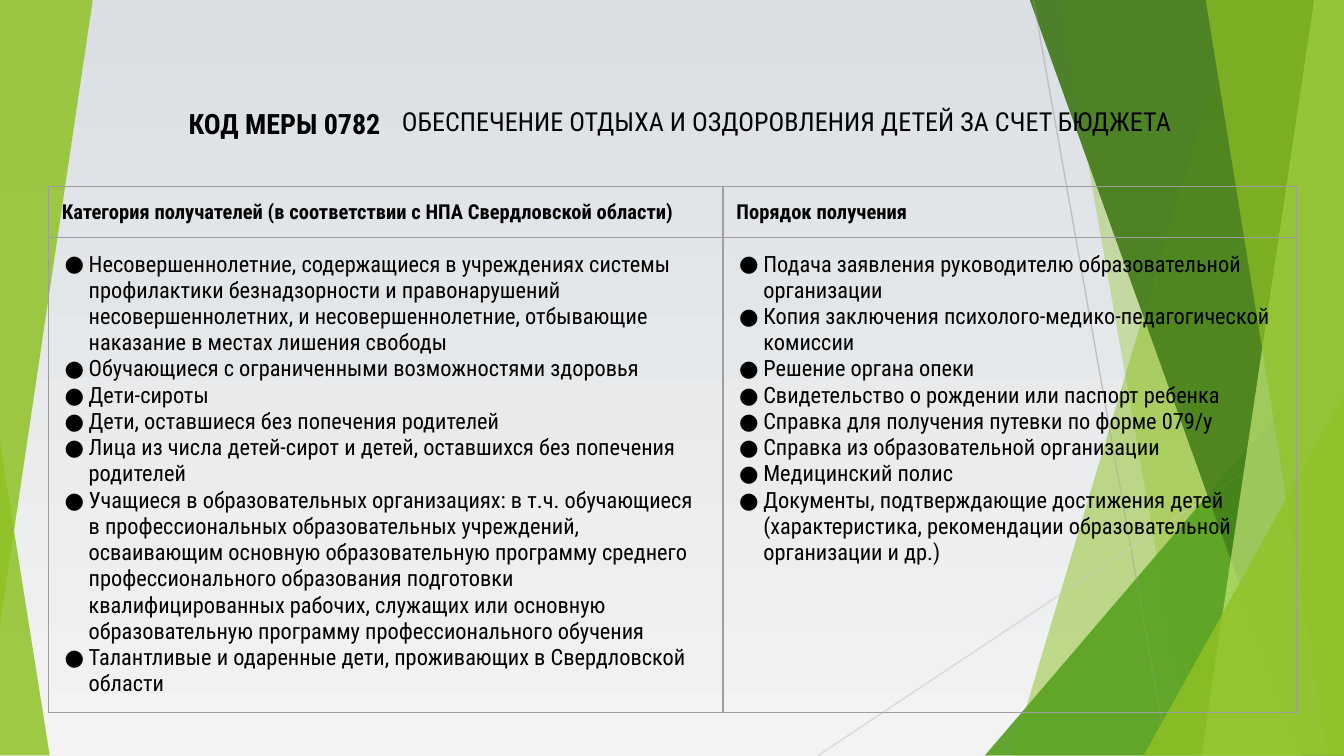
from lxml.etree import SubElement
from pptx import Presentation
from pptx.dml.color import RGBColor
from pptx.enum.shapes import MSO_CONNECTOR, MSO_SHAPE
from pptx.enum.text import MSO_ANCHOR, PP_ALIGN
from pptx.oxml.ns import qn
from pptx.util import Emu, Pt

PX = 9144  # 100 px to the inch
WIDTH, HEIGHT = 1000, 562
FONT = "Roboto Condensed"
BLACK, GREEN, BORDER = "000000", "90C226", "9E9E9E"
BACKGROUND = ["DADFE4", "F3F3F3"]

CODE = "КОД МЕРЫ 0782"
TITLE = "ОБЕСПЕЧЕНИЕ ОТДЫХА И ОЗДОРОВЛЕНИЯ ДЕТЕЙ ЗА СЧЕТ БЮДЖЕТА"
COLUMNS = [
    ("Категория получателей (в соответствии с НПА Свердловской области)", 502, [
        "Несовершеннолетние, содержащиеся в учреждениях системы профилактики безнадзорности "
        "и правонарушений несовершеннолетних, и несовершеннолетние, отбывающие наказание "
        "в местах лишения свободы",
        "Обучающиеся с ограниченными возможностями здоровья",
        "Дети-сироты",
        "Дети, оставшиеся без попечения родителей",
        "Лица из числа детей-сирот и детей, оставшихся без попечения родителей",
        "Учащиеся в образовательных организациях: в т.ч. обучающиеся в профессиональных "
        "образовательных учреждений, осваивающим основную образовательную программу среднего "
        "профессионального образования подготовки квалифицированных рабочих, служащих или "
        "основную образовательную программу профессионального обучения",
        "Талантливые и одаренные дети, проживающих в Свердловской области",
    ]),
    ("Порядок получения", 427, [
        "Подача заявления руководителю образовательной организации",
        "Копия заключения психолого-медико-педагогической комиссии",
        "Решение органа опеки",
        "Свидетельство о рождении или паспорт ребенка",
        "Справка для получения путевки по форме 079/у",
        "Справка из образовательной организации",
        "Медицинский полис",
        "Документы, подтверждающие достижения детей (характеристика, рекомендации "
        "образовательной организации и др.)",
    ]),
]
ROW_HEIGHTS = [37, 353]

# Right-hand facets. Bands: top x, bottom x; triangles: left, top. All reach the right edge.
FACETS = [
    ("band", 921, 753, GREEN, 30),
    ("band", 788, 887, GREEN, 20),
    ("triangle", 733, 250, "54A021", 72),
    ("band", 766, 968, "3F7819", 70),
    ("band", 978, 894, "C0E474", 70),
    ("band", 897, 988, GREEN, 65),
    ("triangle", 851, 294, GREEN, 80),
]
# Left-hand triangles: box, apex position, rotation.
LOWER_LEFT = ((0, 329, 37, 233), 0, 0)
UPPER_LEFT = ((0, 0, 69, 465), 1, 180)
RAYS = [((769, 0), (869, 563), "BFBFBF"), ((1000, 302), (609, 562), "D9D9D9")]


def px(*values):
    return [Emu(value * PX) for value in values]


def color(value):
    return RGBColor.from_string(value)


def set_all(target, **values):
    for name, value in values.items():
        setattr(target, name, value)


def paint(shape, fill, opacity):
    shape.shadow.inherit = False
    shape.line.fill.background()
    shape.fill.solid()
    shape.fill.fore_color.rgb = color(fill)
    tone = shape.fill._xPr.find(qn("a:solidFill"))[0]
    SubElement(tone, qn("a:alpha"), val=str(opacity * 1000))


def add_triangle(slide, box, apex, rotation, fill, opacity):
    shape = slide.shapes.add_shape(MSO_SHAPE.ISOSCELES_TRIANGLE, *px(*box))
    shape.adjustments[0] = apex
    shape.rotation = rotation
    paint(shape, fill, opacity)


def add_facets(slide):
    for kind, first, second, fill, opacity in FACETS:
        if kind == "triangle":
            box = (first, second, WIDTH - first, HEIGHT - second)
            add_triangle(slide, box, 1, 0, fill, opacity)
        else:
            builder = slide.shapes.build_freeform(first, -1, PX)
            builder.add_line_segments([(WIDTH, -1), (WIDTH, HEIGHT), (second, HEIGHT)])
            paint(builder.convert_to_shape(), fill, opacity)


def add_rays(slide):
    for start, end, line in RAYS:
        ray = slide.shapes.add_connector(MSO_CONNECTOR.STRAIGHT, *px(*start, *end))
        ray.line.color.rgb = color(line)
        ray.line.width = Pt(0.75)
        SubElement(ray._element.spPr, qn("a:effectLst"))


def write(paragraph, text, size, bold=False, align=PP_ALIGN.LEFT):
    paragraph.alignment = align
    run = paragraph.add_run()
    run.text = text
    set_all(run.font, name=FONT, size=Pt(size), bold=bold)
    run.font.color.rgb = color(BLACK)


def add_bullet(paragraph):
    properties = paragraph._p.get_or_add_pPr()
    properties.set("marL", str(20 * PX))
    properties.set("indent", str(-18 * PX))
    SubElement(SubElement(properties, qn("a:buClr")), qn("a:srgbClr"), val=BLACK)
    SubElement(properties, qn("a:buFont"), typeface=FONT)
    SubElement(properties, qn("a:buChar"), char="●")


def set_margins(target, side, end):
    side, end = px(side, end)
    set_all(target, margin_left=side, margin_right=side, margin_top=end, margin_bottom=end)


def format_cell(cell):
    set_margins(cell, 10, 10)
    properties = cell._tc.get_or_add_tcPr()
    for side in ("lnL", "lnR", "lnT", "lnB"):
        line = SubElement(properties, qn(f"a:{side}"), w=str(Pt(0.75)))
        SubElement(SubElement(line, qn("a:solidFill")), qn("a:srgbClr"), val=BORDER)
    cell.fill.background()


def add_measure_table(slide):
    widths = [width for _, width, _ in COLUMNS]
    frame = slide.shapes.add_table(len(ROW_HEIGHTS), len(COLUMNS),
                                   *px(36, 139, sum(widths), sum(ROW_HEIGHTS)))
    table = frame.table
    set_all(table, first_row=False, horz_banding=False)
    for row, height in zip(table.rows, px(*ROW_HEIGHTS)):
        row.height = height
    for index, (heading, width, items) in enumerate(COLUMNS):
        table.columns[index].width = Emu(width * PX)
        head, body = table.cell(0, index), table.cell(1, index)
        format_cell(head)
        format_cell(body)
        write(head.text_frame.paragraphs[0], heading, 11, bold=True)
        for number, item in enumerate(items):
            text_frame = body.text_frame
            paragraph = text_frame.add_paragraph() if number else text_frame.paragraphs[0]
            write(paragraph, item, 12)
            add_bullet(paragraph)


def add_heading(slide):
    code = slide.shapes.add_textbox(*px(82, 53, 211, 77))
    set_margins(code.text_frame, 10, 10)
    title = slide.shapes.title
    left, top, width, height = px(292, 53, 630, 77)
    set_all(title, left=left, top=top, width=width, height=height)
    set_margins(title.text_frame, 7, 4)
    for shape in (code, title):
        set_all(shape.text_frame, word_wrap=True, vertical_anchor=MSO_ANCHOR.MIDDLE)
    write(code.text_frame.paragraphs[0], CODE, 15, bold=True, align=PP_ALIGN.RIGHT)
    paragraph = title.text_frame.paragraphs[0]
    write(paragraph, TITLE, 14)
    paragraph.line_spacing = 0.9
    slide.shapes._spTree.append(title._element)  # bring to front


def main():
    presentation = Presentation()
    presentation.slide_width = Emu(WIDTH * PX)
    presentation.slide_height = Emu(WIDTH * PX * 9 // 16)
    slide = presentation.slides.add_slide(presentation.slide_layouts[5])

    background = slide.background.fill
    background.gradient()
    background.gradient_angle = 270
    for stop, value in zip(background.gradient_stops, BACKGROUND):
        stop.color.rgb = color(value)

    add_facets(slide)
    add_triangle(slide, *LOWER_LEFT, GREEN, 85)
    add_rays(slide)
    add_facets(slide)
    add_triangle(slide, *UPPER_LEFT, GREEN, 85)
    add_measure_table(slide)
    add_heading(slide)
    presentation.save("out.pptx")


if __name__ == "__main__":
    main()
